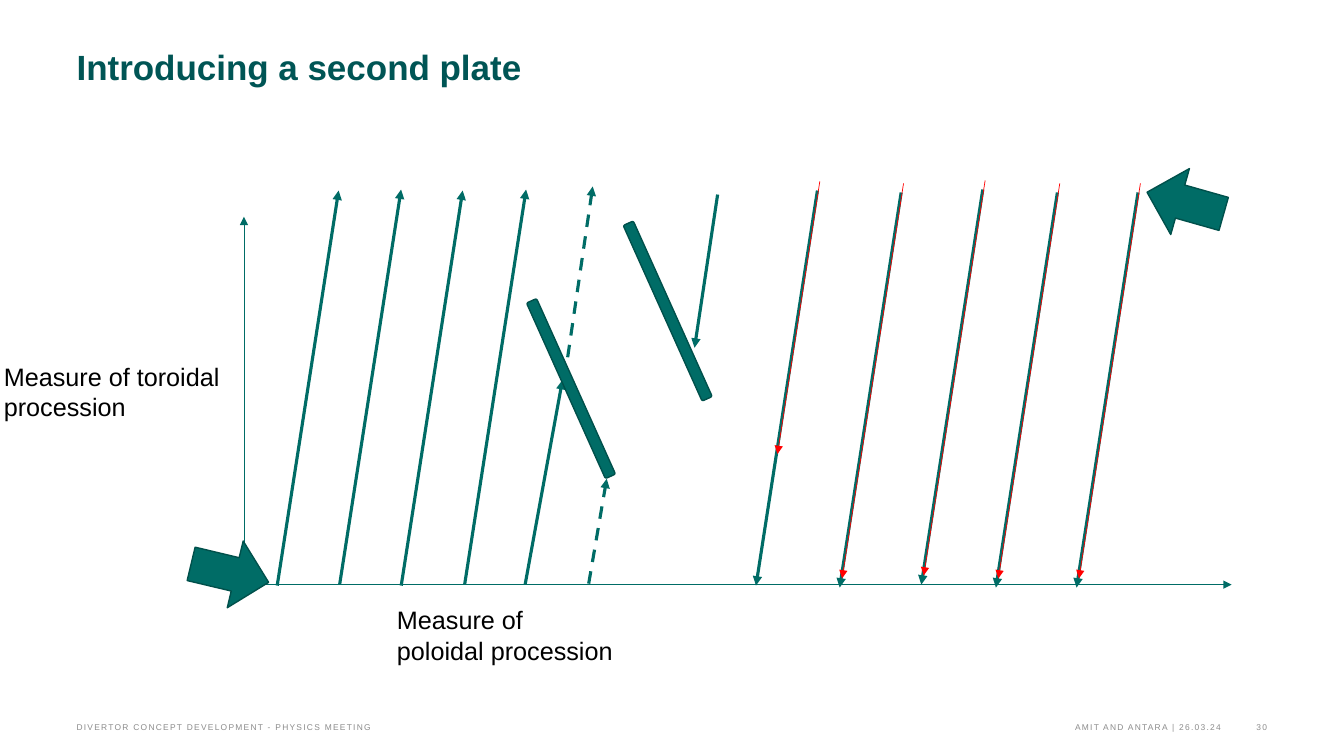
from pptx import Presentation
from pptx.dml.color import RGBColor
from pptx.enum.dml import MSO_LINE
from pptx.enum.shapes import MSO_CONNECTOR, MSO_SHAPE
from pptx.enum.text import MSO_ANCHOR, PP_ALIGN
from pptx.oxml.ns import qn
from pptx.util import Pt
from lxml.etree import SubElement


class Sheet:
    font = "Arial"
    hues = {"title": "005555", "teal": "006C66", "edge": "00504B",
            "red": "FF0000", "text": "000000", "foot": "8C8C8C"}

    def __init__(self, slide):
        self.slide = slide

    def hue(self, name):
        return RGBColor.from_string(self.hues[name])

    def text(self, words, x, y, w, h, size, color, bold=False):
        box = self.slide.shapes.add_textbox(Pt(x), Pt(y), Pt(w), Pt(h))
        frame = box.text_frame
        frame.word_wrap = True
        para = frame.paragraphs[0]
        para.text = words
        para.font.name = self.font
        para.font.size = Pt(size)
        para.font.bold = bold
        para.font.color.rgb = self.hue(color)
        return frame

    def flush(self, frame):
        frame.margin_left = frame.margin_right = 0
        frame.margin_top = frame.margin_bottom = 0

    def title(self, words):
        frame = self.text(words, 54.7, 34.6, 754, 62, 25, "title", True)
        self.flush(frame)
        frame.paragraphs[0].line_spacing = Pt(28)

    def label(self, words, x, y):
        self.text(words, x, y, 168.5, 51, 18, "text")

    def footer(self, words, x, w, align):
        frame = self.text(words, x, 511.2, w, 11.5, 6, "foot")
        self.flush(frame)
        frame.word_wrap = False
        frame.vertical_anchor = MSO_ANCHOR.BOTTOM
        para = frame.paragraphs[0]
        para.alignment = align
        para.runs[0]._r.get_or_add_rPr().set("spc", "90")

    def arrow(self, x1, y1, x2, y2, color="teal", width=2.25, dash=False):
        link = self.slide.shapes.add_connector(
            MSO_CONNECTOR.STRAIGHT, Pt(x1), Pt(y1), Pt(x2), Pt(y2))
        link.line.color.rgb = self.hue(color)
        link.line.width = Pt(width)
        if dash:
            link.line.dash_style = MSO_LINE.DASH
        props = link._element.spPr
        SubElement(props.find(qn("a:ln")), qn("a:tailEnd"), type="triangle")
        SubElement(props, qn("a:effectLst"))

    def solid(self, kind, x, y, w, h, turn):
        shape = self.slide.shapes.add_shape(kind, Pt(x), Pt(y), Pt(w), Pt(h))
        shape.rotation = turn
        shape.shadow.inherit = False
        shape.fill.solid()
        shape.fill.fore_color.rgb = self.hue("teal")
        shape.line.color.rgb = self.hue("edge")
        shape.line.width = Pt(1)

    def plate(self, x, y):
        self.solid(MSO_SHAPE.ROUNDED_RECTANGLE, x, y, 7.9, 137.5, 335.8)

    def block(self, x, y, turn):
        self.solid(MSO_SHAPE.DOWN_ARROW, x, y, 49, 56.9, turn)


def main():
    deck = Presentation()
    deck.slide_width, deck.slide_height = Pt(960), Pt(540)
    sheet = Sheet(deck.slides.add_slide(deck.slide_layouts[6]))
    run, rise = 43.9, 282.2

    sheet.title("Introducing a second plate")
    sheet.arrow(174.3, 417.6, 174.3, 154.8, width=0.5)
    sheet.arrow(174.3, 417.6, 879.8, 417.6, width=0.5)
    sheet.label("Measure of toroidal procession", -4.3, 254.2)
    sheet.label("Measure of poloidal procession", 276.5, 428.4)

    for x, y in ((198, 418.3), (242.6, 417.6), (286.6, 418.3), (331.9, 417.6)):
        sheet.arrow(x, y, x + run, y - rise)
    sheet.arrow(375.1, 417.6, 401.8, 271.4)
    sheet.arrow(420.5, 416.9, 433.4, 342, dash=True)
    sheet.arrow(403.2, 270.7, 423.4, 133.2, dash=True)
    sheet.plate(403.9, 208.8)

    downs = ((812.9, 137.5), (755.3, 137.5), (702, 135.4),
             (643.7, 137.5), (583.9, 136.1))
    for x, y in downs:
        sheet.arrow(x, y, x - run, y + rise)
    sheet.plate(473, 153.4)
    sheet.arrow(512.6, 139, 496.1, 248.4)

    sheet.block(139.7, 380.9, 283.4)
    sheet.block(822.2, 116.6, 105.8)

    for (x, y), part in zip(downs, (1, 1, 1, 1, 0.69)):
        left, top = x + 1.7, y - 6.5
        sheet.arrow(left, top, left - run * part, top + rise * part, "red", 0.5)

    sheet.footer("AMIT AND ANTARA | 26.03.24", 324.7, 547.3, PP_ALIGN.RIGHT)
    sheet.footer("DIVERTOR CONCEPT DEVELOPMENT - PHYSICS MEETING",
                 54.7, 479.5, PP_ALIGN.LEFT)
    sheet.footer("30", 879.1, 25.9, PP_ALIGN.RIGHT)
    deck.save("out.pptx")


if __name__ == "__main__":
    main()
